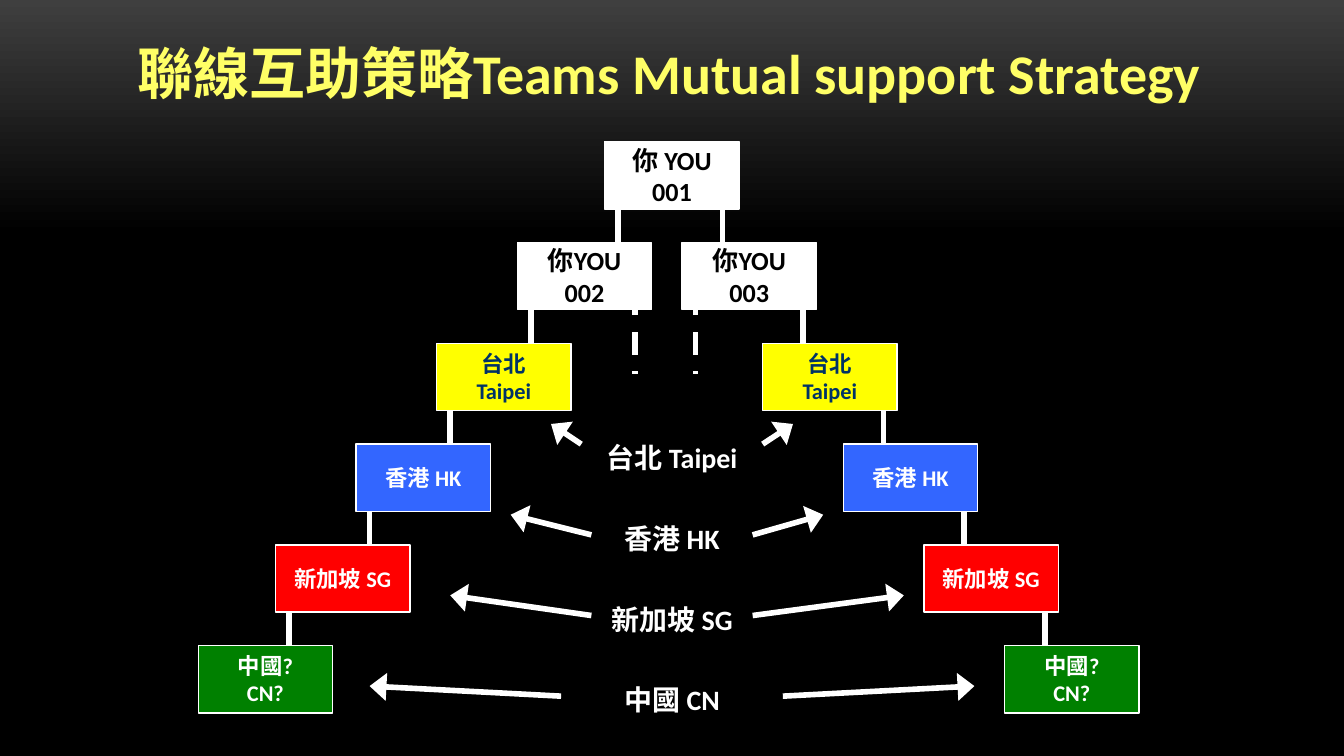
"""Build the mutual support strategy slide: a two-sided team tree with regional arrows."""
from dataclasses import dataclass

from lxml import etree
from pptx import Presentation
from pptx import util as u
from pptx.dml.color import RGBColor
from pptx.enum import dml, shapes, text
from pptx.oxml import ns

EMU_PER_PX = 4572
BOX_W, BOX_H = 200, 100
TOP, ROW_STEP = 211, 150
LINK_LEN = 120


@dataclass(frozen=True)
class Theme:
    font: str = "Calibri"
    white: str = "FFFFFF"
    black: str = "000000"
    glow: str = "3F3F3F"
    title: str = "FFFF66"
    navy: str = "003366"
    yellow: str = "FFFF00"
    blue: str = "3366FF"
    red: str = "FF0000"
    green: str = "008000"
    title_size: int = 30
    region_size: int = 15
    you_size: int = 14
    team_size: int = 12
    link_width: int = 3
    border_width: float = 0.75


@dataclass(frozen=True)
class Level:
    labels: tuple[str, ...]
    lefts: tuple[int, ...]
    links: tuple[int, ...]
    fill: str
    ink: str
    size: int


@dataclass(frozen=True)
class Arrow:
    x1: int
    y1: int
    x2: int
    y2: int


T = Theme()

LEVELS = (
    Level(("你 YOU\v001",), (900,), (920, 1075), T.white, T.black, T.you_size),
    Level(("你YOU\v002", "你YOU\n003"), (770, 1015), (790, 1195), T.white, T.black, T.you_size),
    Level(("台北\nTaipei",) * 2, (650, 1135), (670, 1315), T.yellow, T.navy, T.team_size),
    Level(("香港 HK",) * 2, (530, 1255), (550, 1435), T.blue, T.white, T.team_size),
    Level(("新加坡 SG",) * 2, (410, 1375), (430, 1555), T.red, T.white, T.team_size),
    Level(("中國?\nCN?",) * 2, (295, 1495), (), T.green, T.white, T.team_size),
)
DASHED_LINKS = (945, 1035)
REGIONS = "台北 Taipei\n香港 HK\n新加坡 SG\n中國 CN"
ARROWS = (
    Arrow(1165, 1036, 1450, 1021), Arrow(835, 1036, 550, 1021),
    Arrow(1120, 916, 1345, 886), Arrow(880, 916, 670, 886),
    Arrow(1120, 796, 1225, 766), Arrow(880, 796, 760, 766),
    Arrow(1135, 661, 1180, 631), Arrow(865, 661, 820, 631),
)


def px(n: int) -> u.Emu:
    """Turn pixels into EMU."""
    return u.Emu(n * EMU_PER_PX)


def rgb(value: str) -> RGBColor:
    """Turn a hex string into a colour."""
    return RGBColor.from_string(value)


def write(tf, content: str, size: int, ink: str, wrap: bool = False) -> None:
    """Fill a text frame with centred bold text."""
    tf.margin_left = tf.margin_right = px(14)
    tf.margin_top = tf.margin_bottom = px(8)
    tf.word_wrap = wrap
    tf.auto_size = text.MSO_AUTO_SIZE.NONE
    tf.text = content
    for p in tf.paragraphs:
        p.alignment = text.PP_ALIGN.CENTER
        p.font.name = T.font
        p.font.size = u.Pt(size)
        p.font.bold = True
        p.font.color.rgb = rgb(ink)


def add_line(s, x1: int, y1: int, x2: int, y2: int,
             dashed: bool = False, arrow: bool = False) -> None:
    """Draw a white line, optionally dashed or with an arrowhead at its end."""
    c = s.shapes.add_connector(shapes.MSO_CONNECTOR.STRAIGHT, px(x1), px(y1), px(x2), px(y2))
    c.line.width = u.Pt(T.link_width)
    c.line.color.rgb = rgb(T.white)
    if dashed:
        c.line.dash_style = dml.MSO_LINE.DASH
    if arrow:
        etree.SubElement(c.line._get_or_add_ln(), ns.qn("a:tailEnd"), type="triangle", w="lg", len="med")
    etree.SubElement(c._element.spPr, ns.qn("a:effectLst"))


def add_box(s, x: int, y: int, label: str, level: Level) -> None:
    """Draw one team box."""
    sp = s.shapes.add_shape(shapes.MSO_SHAPE.RECTANGLE, px(x), px(y), px(BOX_W), px(BOX_H))
    sp.shadow.inherit = False
    sp.fill.solid()
    sp.fill.fore_color.rgb = rgb(level.fill)
    sp.line.color.rgb = rgb(T.white)
    sp.line.width = u.Pt(T.border_width)
    sp.text_frame.vertical_anchor = text.MSO_ANCHOR.MIDDLE
    write(sp.text_frame, label, level.size, level.ink)


def add_tree(s) -> None:
    """Draw the links, then the boxes that cover their ends."""
    for x in DASHED_LINKS:
        add_line(s, x, 436, x, 436 + LINK_LEN, dashed=True)
    for row, level in enumerate(LEVELS):
        y = TOP + row * ROW_STEP + 60
        for x in level.links:
            add_line(s, x, y, x, y + LINK_LEN)
    for row, level in enumerate(LEVELS):
        for x, label in zip(level.lefts, level.labels):
            add_box(s, x, TOP + row * ROW_STEP, label, level)


def add_regions(s) -> None:
    """Write the central column of regions and its arrows."""
    tf = s.shapes.add_textbox(px(885), px(638), px(230), px(438)).text_frame
    write(tf, REGIONS, T.region_size, T.white, wrap=True)
    for i, p in enumerate(tf.paragraphs):
        p.line_spacing = 1.2
        if i:
            p.space_before = u.Pt(21.6)
    for a in ARROWS:
        add_line(s, a.x1, a.y1, a.x2, a.y2, arrow=True)


def add_background(s) -> None:
    """Fade the slide from grey at the top to black."""
    fill = s.background.fill
    fill.gradient()
    fill.gradient_angle = 270
    for stop, colour, position in zip(fill.gradient_stops, (T.glow, T.black), (0, 0.31)):
        stop.color.rgb = rgb(colour)
        stop.position = position


def add_title(s) -> None:
    """Place and format the title."""
    sp = s.shapes.title
    sp.left, sp.top, sp.width, sp.height = px(128), px(24), px(1755), px(166)
    sp.text_frame.vertical_anchor = text.MSO_ANCHOR.MIDDLE
    write(sp.text_frame, "聯線互助策略Teams Mutual support Strategy ", T.title_size, T.title, wrap=True)


def main() -> None:
    """Build and save the deck."""
    prs = Presentation()
    prs.slide_width, prs.slide_height = px(2000), px(1125)
    s = prs.slides.add_slide(prs.slide_layouts[5])
    add_background(s)
    add_title(s)
    add_tree(s)
    add_regions(s)
    prs.save("out.pptx")


if __name__ == "__main__":
    main()
